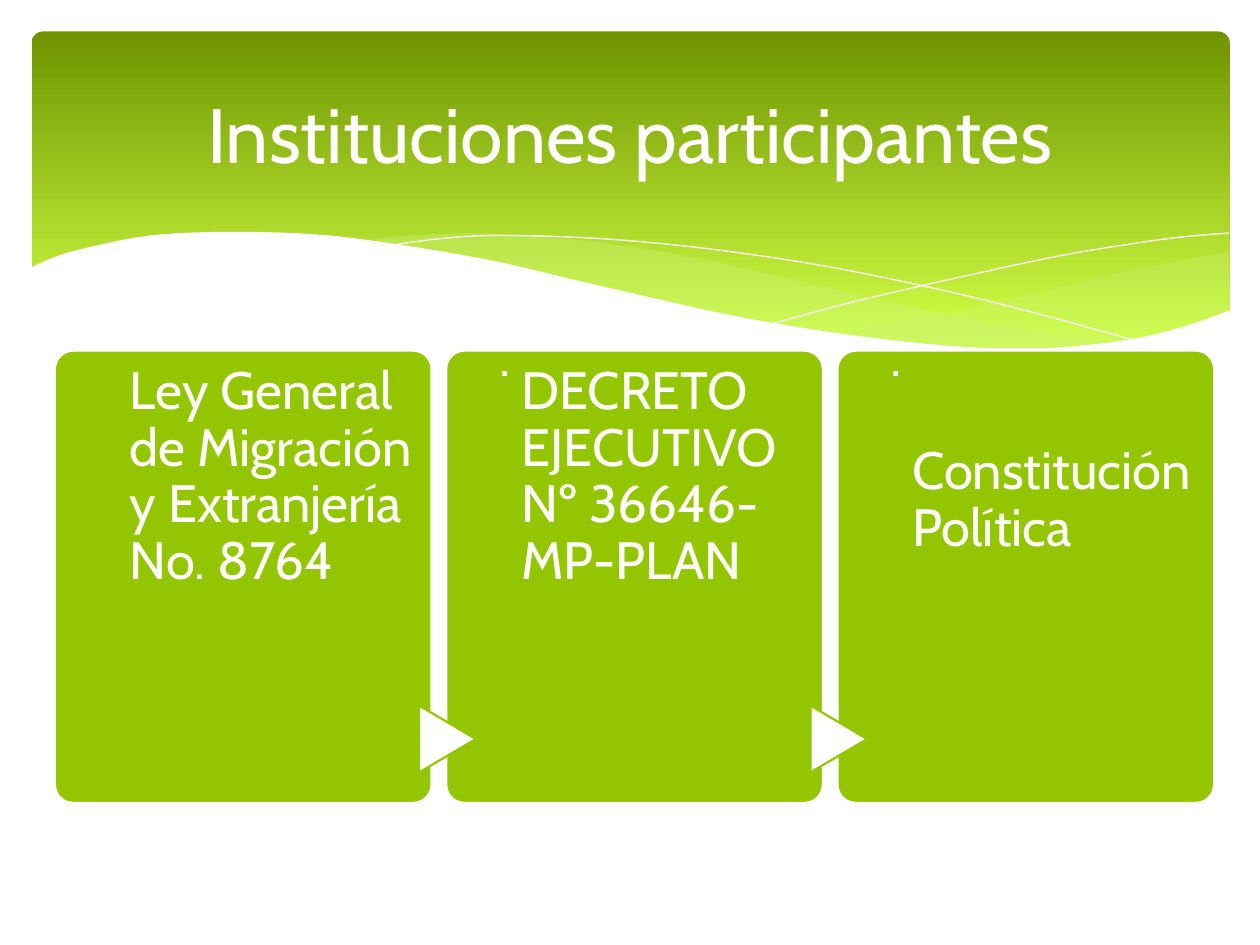
from dataclasses import dataclass

import pptx
import pptx.dml.color
import pptx.enum.shapes
import pptx.enum.text
import pptx.oxml.ns
import pptx.util
from lxml import etree

Pt = pptx.util.Pt
SHAPE = pptx.enum.shapes.MSO_SHAPE
ALIGN = pptx.enum.text.PP_ALIGN
ANCHOR = pptx.enum.text.MSO_ANCHOR
Points = list[tuple[float, float]]

WHITE, GREEN, PALE = "FFFFFF", "94C600", "CAF278"
FONT = "Cabin"


@dataclass
class Card:
    text: str
    text_top: float = 8
    linked: bool = True


CARDS = [
    Card("Ley General de Migración y Extranjería No. 8764", linked=False),
    Card("DECRETO EJECUTIVO Nº 36646-MP-PLAN"),
    Card("Constitución Política", text_top=54),
]
CARD_LEFT, CARD_TOP, CARD_W, CARD_H, CARD_PITCH = 31, 200, 216, 259.2, 223.6

RIGHT_WAVE_TOP = [(702, 144), (673.2, 149), (641.5, 155.5), (599, 165.6),
                  (542.2, 178.6), (475.9, 190.8)]
RIGHT_WAVE_BOTTOM = [(475.9, 190.8), (507.6, 195.1), (545, 198.7), (586.1, 200.2),
                     (621.4, 198), (651.6, 193.7), (678.2, 186.5), (702.7, 177.8)]
MIDDLE_WAVE_TOP = [(643, 196.6), (581, 187.2), (533.5, 177.8), (452.9, 159.8),
                   (409.7, 149.8), (361.4, 141.1), (318.2, 136.1), (273.6, 133.2),
                   (236.2, 134.6), (205.9, 137.5)]
MIDDLE_WAVE_BOTTOM = [(205.9, 137.5), (246.2, 143.3), (290.9, 151.9), (323.3, 159.8),
                      (381.6, 172.8), (432.7, 183.6), (478.8, 191.5), (519.8, 197.3),
                      (556.6, 199.4), (596.2, 200.2), (624.2, 198.7), (643, 196.6)]
FALLING_LINE = [(222.5, 140.4), (247.7, 136.8), (278.6, 134.6), (324, 135.4),
                (367.2, 138.2), (419, 144), (478.8, 153.4), (547.2, 167.8),
                (598.3, 180.7), (653, 195.8)]
RISING_LINE = [(441.4, 185), (483.8, 173.5), (538.6, 160.6), (601.9, 146.9),
               (644.4, 139.7), (675.4, 135.4), (702, 133.2)]
WHITE_WAVE = [(16.6, 153.4), (33, 146.2), (54.7, 140.4), (85.7, 134.6), (127.4, 132.5),
              (180, 133.9), (227.5, 139.7), (281.5, 149), (321.8, 158.4),
              (362.2, 167.8), (416.9, 180), (466.6, 188.6), (509.8, 194.4),
              (547.9, 198), (582.5, 199.4), (612, 198), (647.3, 193.7),
              (676.8, 186.5), (703.4, 177.1)]
WHITE_BASE = [(703.4, 236.9), (16.6, 236.9)]


def rgb(color: str) -> pptx.dml.color.RGBColor:
    return pptx.dml.color.RGBColor.from_string(color)


def smooth(knots: Points, steps: int = 5) -> Points:
    """Sample a Catmull-Rom curve through the knots."""
    ends = [knots[0], *knots, knots[-1]]
    curve = [knots[0]]
    for a, b, c, d in zip(ends, ends[1:], ends[2:], ends[3:]):
        for t in (i / steps for i in range(1, steps + 1)):
            curve.append(tuple(
                (2 * q + (r - p) * t + (2 * p - 5 * q + 4 * r - s) * t**2
                 + (3 * q - p - 3 * r + s) * t**3) / 2
                for p, q, r, s in zip(a, b, c, d)))
    return curve


def paint(sp, fill: str | None, line: str | None = None, width: float = 0) -> None:
    sp.shadow.inherit = False
    if fill:
        sp.fill.solid()
        sp.fill.fore_color.rgb = rgb(fill)
    else:
        sp.fill.background()
    if line:
        sp.line.color.rgb = rgb(line)
        sp.line.width = Pt(width)
    else:
        sp.line.fill.background()


def add_outline(s, points: Points, fill: str | None = None, alpha: int = 100,
                line: str | None = None) -> None:
    start, *rest = [(Pt(x), Pt(y)) for x, y in points]
    builder = s.shapes.build_freeform(*start)
    builder.add_line_segments(rest, close=fill is not None)
    sp = builder.convert_to_shape()
    paint(sp, fill, line)
    if alpha < 100:
        clr = sp.fill._xPr.find(".//" + pptx.oxml.ns.qn("a:srgbClr"))
        etree.SubElement(clr, pptx.oxml.ns.qn("a:alpha"), val=str(alpha * 1000))


def add_box(s, kind, x: float, y: float, w: float, h: float):
    return s.shapes.add_shape(kind, Pt(x), Pt(y), Pt(w), Pt(h))


def add_text(s, text: str, x: float, y: float, w: float, h: float, size: float,
             insets: tuple = (0, 0, 0, 0), align=ALIGN.LEFT, anchor=ANCHOR.TOP,
             spacing: float = 0.9, rotation: float = 0) -> None:
    """Add a text box; insets run left, top, right, bottom."""
    sp = s.shapes.add_textbox(Pt(x), Pt(y), Pt(w), Pt(h))
    sp.rotation = rotation
    tf = sp.text_frame
    tf.word_wrap = True
    tf.vertical_anchor = anchor
    tf.margin_left, tf.margin_top, tf.margin_right, tf.margin_bottom = map(Pt, insets)
    p = tf.paragraphs[0]
    p.text, p.alignment, p.line_spacing = text, align, spacing
    p.font.name, p.font.size, p.font.color.rgb = FONT, Pt(size), rgb(WHITE)


def add_header(s) -> None:
    sp = add_box(s, SHAPE.ROUNDED_RECTANGLE, 18, 18, 684.7, 194.4)
    sp.adjustments[0] = 0.034
    paint(sp, None)
    sp.fill.gradient()
    sp.fill.gradient_angle = 270
    for stop, (pos, color) in zip(sp.fill.gradient_stops, [(0, "6F9400"), (0.9, "D0FF44")]):
        stop.position, stop.color.rgb = pos, rgb(color)

    add_outline(s, smooth(RIGHT_WAVE_TOP) + smooth(RIGHT_WAVE_BOTTOM), PALE, 29)
    add_outline(s, smooth(MIDDLE_WAVE_TOP) + smooth(MIDDLE_WAVE_BOTTOM), PALE, 40)
    for knots in (FALLING_LINE, RISING_LINE):
        add_outline(s, smooth(knots), line=WHITE)
    add_outline(s, smooth(WHITE_WAVE) + WHITE_BASE, WHITE)


def add_card(s, card: Card, x: float) -> None:
    sp = add_box(s, SHAPE.ROUNDED_RECTANGLE, x, CARD_TOP, CARD_W, CARD_H)
    sp.adjustments[0] = 0.05
    paint(sp, GREEN, WHITE, 2)
    if card.linked:
        add_text(s, ".", x - 84.6, 284.4, 212.4, 43.2, 31, (0, 8.6, 10.8, 0),
                 align=ALIGN.RIGHT, rotation=270)
        arrow = add_box(s, SHAPE.FLOWCHART_EXTRACT, x - 18, 406.1, 38.2, 32.4)
        arrow.rotation = 90
        paint(arrow, WHITE, GREEN, 1.25)
    add_text(s, card.text, x + 43.2, CARD_TOP, 161.3, CARD_H, 30, (0, card.text_top, 0, 0))


def main() -> None:
    prs = pptx.Presentation()
    prs.slide_width, prs.slide_height = Pt(720), Pt(540)
    s = prs.slides.add_slide(prs.slide_layouts[6])
    add_header(s)
    for i, card in enumerate(CARDS):
        add_card(s, card, CARD_LEFT + i * CARD_PITCH)
    add_text(s, "Instituciones participantes", 36, 26.6, 648, 98.6, 44,
             (7.2, 3.6, 7.2, 3.6), ALIGN.CENTER, ANCHOR.MIDDLE, spacing=1)
    prs.save("out.pptx")


if __name__ == "__main__":
    main()
